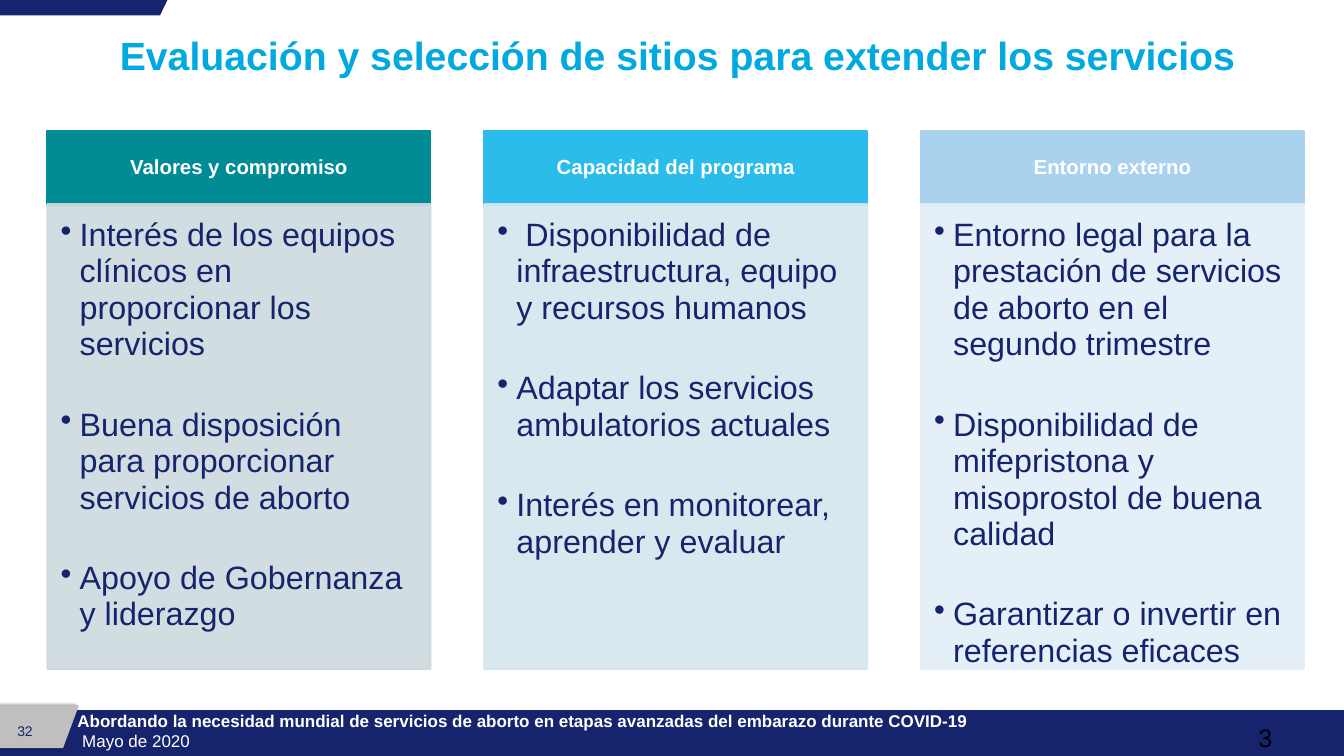
from dataclasses import dataclass

from lxml import etree
from pptx import Presentation
from pptx.dml.color import RGBColor
from pptx.enum.shapes import MSO_SHAPE
from pptx.enum.text import MSO_ANCHOR, PP_ALIGN
from pptx.oxml import parse_xml
from pptx.oxml.ns import qn
from pptx.shapes.autoshape import Shape
from pptx.slide import Slide
from pptx.util import Cm, Pt

RECTANGLE = MSO_SHAPE.RECTANGLE
MANUAL_INPUT = MSO_SHAPE.FLOWCHART_MANUAL_INPUT
LEFT, CENTER = PP_ALIGN.LEFT, PP_ALIGN.CENTER
TOP, MIDDLE, BOTTOM = MSO_ANCHOR.TOP, MSO_ANCHOR.MIDDLE, MSO_ANCHOR.BOTTOM

DRAWING_NS = "http://schemas.openxmlformats.org/drawingml/2006/main"
TAB_SHADOW = (
    f'<a:effectLst xmlns:a="{DRAWING_NS}">'
    '<a:outerShdw blurRad="50800" dist="38100" dir="10800000">'
    '<a:srgbClr val="000000"><a:alpha val="43000"/></a:srgbClr>'
    "</a:outerShdw></a:effectLst>"
)


@dataclass(frozen=True)
class Theme:
    font: str = "Arial"
    navy: str = "16246D"
    sky: str = "00A9E0"
    grey: str = "BFBFBF"
    white: str = "FFFFFF"
    black: str = "000000"
    title: float = 46.2
    body: float = 38
    counter: float = 29.7
    heading: float = 24
    footer: float = 20
    page: float = 16.5


@dataclass(frozen=True)
class Box:
    left: float
    top: float
    width: float
    height: float


@dataclass(frozen=True)
class Column:
    heading: str
    header_color: str
    body_color: str
    points: tuple[str, ...]


THEME = Theme()
COLUMN_LEFT, COLUMN_WIDTH, COLUMN_PITCH = 1.96, 15.93, 18.15
HEADER_TOP, HEADER_HEIGHT = 5.46, 3.05
BODY_TOP, BODY_HEIGHT = 8.48, 19.33
HEADER_INSETS = (0.48, 0.28, 0.48, 0.28)
BODY_INSETS = (0.56, 0.56, 0.76, 0.84)
BULLET_INDENT = Cm(0.79)
POINT_GAP = 52

COLUMNS = (
    Column("Valores y compromiso", "008B95", "CCDADD", (
        "Interés de los equipos clínicos en proporcionar los servicios",
        "Buena disposición para proporcionar servicios de aborto",
        "Apoyo de Gobernanza y liderazgo",
    )),
    Column("Capacidad del programa", "2BBCEB", "D5E6ED", (
        " Disponibilidad de infraestructura, equipo y recursos humanos",
        "Adaptar los servicios ambulatorios actuales",
        "Interés en monitorear, aprender y evaluar",
    )),
    Column("Entorno externo", "AAD1ED", "E3EEF8", (
        "Entorno legal para la prestación de servicios de aborto en el segundo trimestre",
        "Disponibilidad de mifepristona y misoprostol de buena calidad",
        "Garantizar o invertir en referencias eficaces",
    )),
)


def set_frame(shape: Shape, insets: tuple[float, ...], anchor: MSO_ANCHOR = TOP) -> None:
    frame = shape.text_frame
    frame.word_wrap = True
    frame.vertical_anchor = anchor
    frame.margin_left, frame.margin_top, frame.margin_right, frame.margin_bottom = map(Cm, insets)


def write(shape: Shape, text: str, *, size: float, color: str, bold: bool = False,
          align: PP_ALIGN = LEFT, spacing: float = 1.0, before: float = 0,
          bullet: bool = False) -> None:
    frame = shape.text_frame
    paragraph = frame.add_paragraph() if frame.text else frame.paragraphs[0]
    paragraph.alignment = align
    paragraph.line_spacing = spacing
    paragraph.space_before = Pt(before)
    if bullet:
        properties = paragraph._p.get_or_add_pPr()
        properties.set("marL", str(BULLET_INDENT))
        properties.set("indent", str(-BULLET_INDENT))
        etree.SubElement(properties, qn("a:buChar"), char="•")
    run = paragraph.add_run()
    run.text = text
    run.font.name = THEME.font
    run.font.size = Pt(size)
    run.font.bold = bold
    run.font.color.rgb = RGBColor.from_string(color)


def add_text_box(slide: Slide, box: Box, insets: tuple[float, ...],
                 anchor: MSO_ANCHOR = TOP) -> Shape:
    text_box = slide.shapes.add_textbox(Cm(box.left), Cm(box.top), Cm(box.width), Cm(box.height))
    set_frame(text_box, insets, anchor)
    return text_box


def paint(shape: Shape, color: str, line_width: float = 0, opacity: int = 100) -> None:
    shape.shadow.inherit = False
    shape.fill.solid()
    shape.fill.fore_color.rgb = RGBColor.from_string(color)
    if line_width:
        shape.line.width = Pt(line_width)
        shape.line.color.rgb = RGBColor.from_string(color)
    else:
        shape.line.fill.background()
    if opacity < 100:
        for tint in shape._element.spPr.iter(qn("a:srgbClr")):
            etree.SubElement(tint, qn("a:alpha"), val=str(opacity * 1000))


def add_block(slide: Slide, box: Box, color: str, kind: MSO_SHAPE = RECTANGLE,
              line_width: float = 0, opacity: int = 100) -> Shape:
    block = slide.shapes.add_shape(kind, Cm(box.left), Cm(box.top), Cm(box.width), Cm(box.height))
    paint(block, color, line_width, opacity)
    return block


def draw_frame(slide: Slide) -> None:
    add_block(slide, Box(0, 29.51, 55.85, 1.91), THEME.navy)

    page_tab = add_block(slide, Box(0.76, 28.58, 1.75, 3.25), THEME.grey, MANUAL_INPUT, 0.75)
    page_tab.rotation = 270
    tab_properties = page_tab._element.spPr
    tab_properties.xfrm.set("flipV", "1")
    tab_properties.replace(tab_properties.find(qn("a:effectLst")), parse_xml(TAB_SHADOW))

    page_number = add_text_box(slide, Box(0, 29.49, 2.08, 1.24), (0, 0, 0, 0), BOTTOM)
    write(page_number, "32", size=THEME.page, color=THEME.navy, align=CENTER)

    corner = slide.shapes.build_freeform(0, 0)
    corner.add_line_segments([(Cm(6.96), 0), (Cm(6.65), Cm(0.64)), (0, Cm(0.64))])
    paint(corner.convert_to_shape(), THEME.navy)


def draw_column(slide: Slide, column: Column, left: float) -> None:
    header = add_block(slide, Box(left, HEADER_TOP, COLUMN_WIDTH, HEADER_HEIGHT),
                       column.header_color, line_width=2)
    set_frame(header, HEADER_INSETS, MIDDLE)
    write(header, column.heading, size=THEME.heading, color=THEME.white,
          bold=True, align=CENTER, spacing=0.9)

    body = add_block(slide, Box(left, BODY_TOP, COLUMN_WIDTH, BODY_HEIGHT),
                     column.body_color, line_width=2, opacity=90)
    set_frame(body, BODY_INSETS)
    for index, point in enumerate(column.points):
        write(body, point, size=THEME.body, color=THEME.navy, spacing=0.94,
              before=POINT_GAP if index else 0, bullet=True)


def main() -> None:
    presentation = Presentation()
    presentation.slide_width, presentation.slide_height = Cm(55.85), Cm(31.42)
    slide = presentation.slides.add_slide(presentation.slide_layouts[6])

    draw_frame(slide)
    counter = add_text_box(slide, Box(52.04, 29.9, 1.17, 0.94), (0.25, 0.13, 0.25, 0.13))
    write(counter, "3", size=THEME.counter, color=THEME.black)

    title = add_text_box(slide, Box(2.06, 1.17, 51.77, 3.23), (0, 0.13, 0, 0.13))
    write(title, " Evaluación y selección de sitios para extender los servicios",
          size=THEME.title, color=THEME.sky, bold=True, align=CENTER)

    for index, column in enumerate(COLUMNS):
        draw_column(slide, column, COLUMN_LEFT + index * COLUMN_PITCH)

    footer = add_text_box(slide, Box(2.97, 29.9, 45.34, 1.32), (0.25, 0, 0.25, 0), BOTTOM)
    write(footer, "Abordando la necesidad mundial de servicios de aborto en etapas avanzadas "
          "del embarazo durante COVID-19", size=THEME.footer, color=THEME.white, bold=True)
    write(footer, " Mayo de 2020", size=THEME.footer, color=THEME.white)

    presentation.save("out.pptx")


if __name__ == "__main__":
    main()
